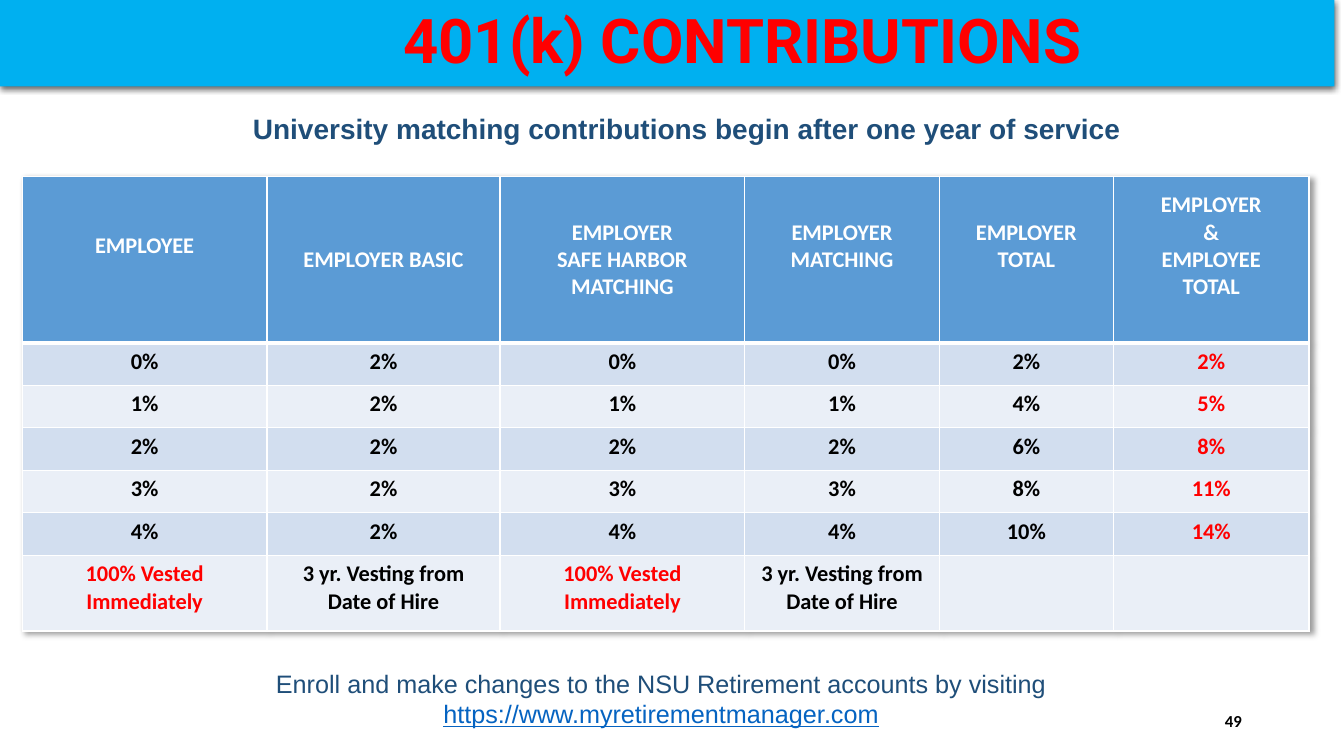
"""Build the 401(k) contributions slide with its matching table."""
from dataclasses import dataclass

from pptx import Presentation, util as u
from pptx.dml.color import RGBColor
from pptx.enum import shapes, text
from pptx.oxml import parse_xml
from pptx.oxml.ns import nsdecls

HUES = {
    "white": "FFFFFF", "black": "000000", "red": "FF0000", "sky": "00B0F0",
    "navy": "1F4E79", "link": "0563C1", "head": "5B9BD5",
    "dark": "D2DEEF", "light": "EAEFF7",
}
WIDTHS = [6.17, 5.87, 6.17, 4.9, 4.39, 4.93]
HEIGHTS = [4.19] + [1.07] * 5 + [1.91]
HEADS = [
    "EMPLOYEE", "EMPLOYER BASIC", "EMPLOYER\nSAFE HARBOR MATCHING",
    "EMPLOYER\nMATCHING", "EMPLOYER\nTOTAL", "EMPLOYER\n&\nEMPLOYEE\nTOTAL",
]
RATES = [(0, 2, 0, 0, 2, 2), (1, 2, 1, 1, 4, 5), (2, 2, 2, 2, 6, 8),
         (3, 2, 3, 3, 8, 11), (4, 2, 4, 4, 10, 14)]
VESTED = ["100% Vested Immediately", "3 yr. Vesting from Date of Hire"] * 2 + ["", ""]
RAISED = {0, 3, 4, 5}


@dataclass
class Style:
    face: str
    size: float
    hue: str
    bold: bool = False
    align: text.PP_ALIGN = text.PP_ALIGN.CENTER


@dataclass
class Note:
    left: float
    top: float
    width: float
    height: float
    words: str
    style: Style
    anchor: text.MSO_ANCHOR = text.MSO_ANCHOR.TOP
    link: str = ""


NOTES = [
    Note(0.38, 2.69, 33.87, 1.12,
         "University matching contributions begin after one year of service",
         Style("Arial", 20, "navy", True)),
    Note(1.98, 16.71, 29.36, 2.2,
         "Enroll and make changes to the NSU Retirement accounts by visiting ",
         Style("Arial", 18, "navy"), link="https://www.myretirementmanager.com"),
    Note(23.93, 17.65, 7.62, 1.02, "49",
         Style("Calibri", 12, "black", True, text.PP_ALIGN.RIGHT), text.MSO_ANCHOR.MIDDLE),
]


def color(name: str) -> RGBColor:
    return RGBColor.from_string(HUES[name])


def format_text(frame, style: Style) -> None:
    for para in frame.paragraphs:
        para.alignment = style.align
        font = para.font
        font.name, font.size, font.bold = style.face, u.Pt(style.size), style.bold
        font.color.rgb = color(style.hue)


def make_shadow(blur: float, dist: float, angle: int, alpha: int):
    return parse_xml(
        f'<a:effectLst {nsdecls("a")}><a:outerShdw blurRad="{u.Pt(blur)}" '
        f'dist="{u.Pt(dist)}" dir="{angle * 60000}" algn="tl" rotWithShape="0">'
        f'<a:srgbClr val="{HUES["black"]}"><a:alpha val="{alpha * 1000}"/>'
        '</a:srgbClr></a:outerShdw></a:effectLst>')


def add_note(slide, note: Note) -> None:
    box = slide.shapes.add_textbox(
        u.Cm(note.left), u.Cm(note.top), u.Cm(note.width), u.Cm(note.height))
    frame = box.text_frame
    frame.word_wrap = True
    frame.vertical_anchor = note.anchor
    frame.text = note.words
    format_text(frame, note.style)
    if note.link:
        run = frame.paragraphs[0].add_run()
        run.text = note.link
        run.font.underline = True
        run.font.color.rgb = color("link")


def add_title(slide) -> None:
    bar = slide.shapes.add_shape(
        shapes.MSO_SHAPE.RECTANGLE, 0, 0, u.Cm(33.63), u.Cm(2.18))
    bar.fill.solid()
    bar.fill.fore_color.rgb = color("sky")
    bar.line.fill.background()
    bar._element.spPr.append(make_shadow(4.5, 1.5, 90, 63))
    frame = bar.text_frame
    frame.margin_left = u.Cm(4.06)
    frame.vertical_anchor = text.MSO_ANCHOR.MIDDLE
    frame.text = "401(k) CONTRIBUTIONS"
    frame.paragraphs[0].line_spacing = 0.9
    format_text(frame, Style("Roboto", 44, "red", True))


def fill_cell(cell, row: int, col: int, words: str) -> None:
    props = cell._tc.get_or_add_tcPr()
    for side in "LRTB":
        thick = (row, side) in {(0, "B"), (1, "T")}
        props.append(parse_xml(
            f'<a:ln{side} {nsdecls("a")} w="{u.Pt(3 if thick else 1)}"><a:solidFill>'
            f'<a:srgbClr val="{HUES["white"]}"/></a:solidFill></a:ln{side}>'))
    cell.fill.solid()
    band = "dark" if row % 2 else "light"
    cell.fill.fore_color.rgb = color(band if row else "head")
    cell.margin_left = cell.margin_right = u.Cm(0.33)
    cell.margin_top = cell.margin_bottom = u.Cm(0.13)
    hue = "red" if col == 5 or words.startswith("100%") else "black"
    if row == 0:
        hue = "white"
        cell.vertical_anchor = text.MSO_ANCHOR.MIDDLE
        if col in RAISED:
            cell.margin_bottom = u.Cm(0.82)
    cell.text = words
    format_text(cell.text_frame, Style("Calibri", 16, hue, True))


def add_rates(slide) -> None:
    rows = [HEADS] + [[f"{rate}%" for rate in line] for line in RATES] + [VESTED]
    table = slide.shapes.add_table(
        len(rows), len(WIDTHS), u.Cm(0.56), u.Cm(4.45),
        u.Cm(sum(WIDTHS)), u.Cm(sum(HEIGHTS))).table
    table.horz_banding = False
    table._tbl.tblPr.insert(0, make_shadow(4, 3, 45, 40))
    for col, width in zip(table.columns, WIDTHS):
        col.width = u.Cm(width)
    for row, height in zip(table.rows, HEIGHTS):
        row.height = u.Cm(height)
    for row, line in enumerate(rows):
        for col, words in enumerate(line):
            fill_cell(table.cell(row, col), row, col, words)


def main() -> None:
    deck = Presentation()
    deck.slide_width, deck.slide_height = u.Cm(33.87), u.Cm(19.05)
    slide = deck.slides.add_slide(deck.slide_layouts[6])
    add_rates(slide)
    add_title(slide)
    for note in NOTES:
        add_note(slide, note)
    deck.save("out.pptx")


if __name__ == "__main__":
    main()
